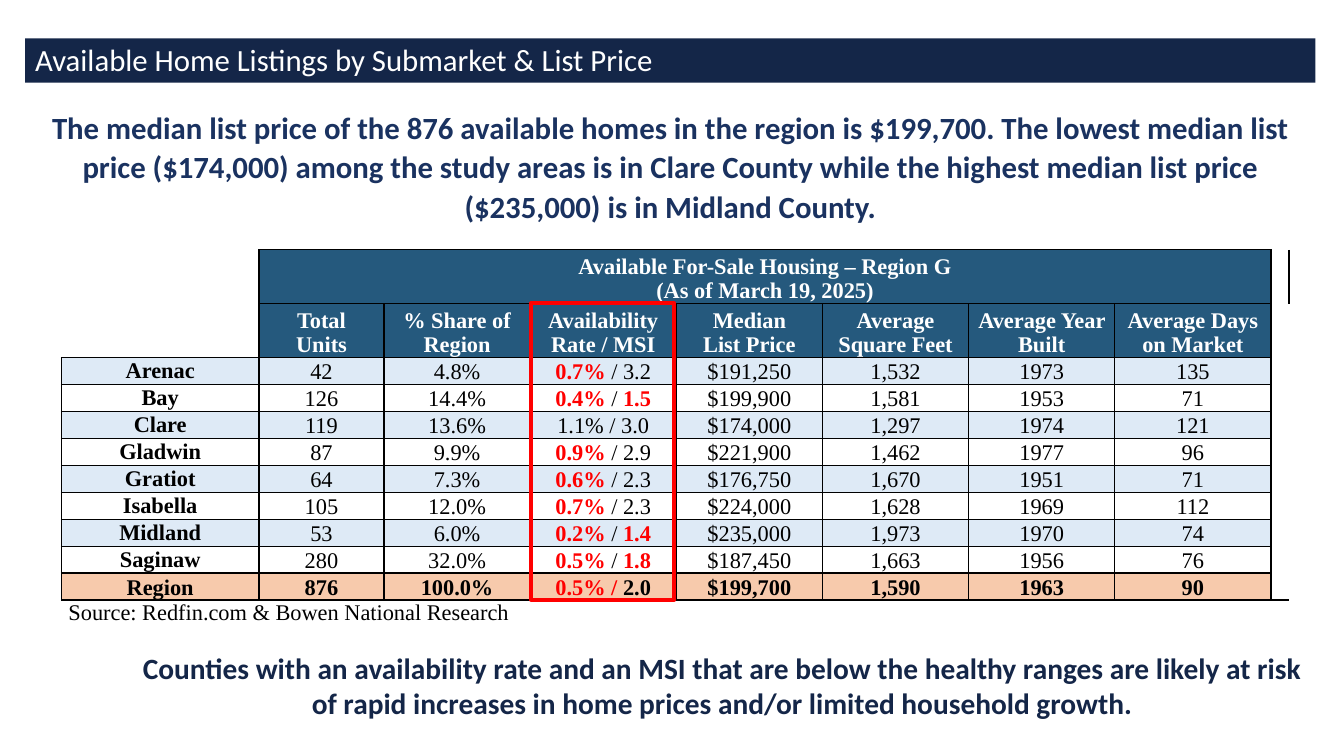
from dataclasses import dataclass

from lxml.etree import SubElement
from pptx import Presentation
from pptx.dml.color import RGBColor
from pptx.enum.shapes import MSO_SHAPE
from pptx.enum.text import MSO_ANCHOR, MSO_AUTO_SIZE, PP_ALIGN
from pptx.oxml.ns import qn
from pptx.util import Pt


@dataclass(frozen=True)
class Theme:
    heading_font: str = "Calibri"
    table_font: str = "Times New Roman"
    heading_size: float = 22
    closing_size: float = 21
    table_size: int = 16
    navy: str = "142648"
    blue: str = "1A3260"
    header: str = "25597D"
    band: str = "DEEAF6"
    total: str = "F7CAAC"
    alert: str = "FF0000"
    black: str = "000000"
    white: str = "FFFFFF"
    plain_table: str = "{2D5ABB26-0587-4C30-8999-92F81FD0307C}"


COLUMN_WIDTHS = [141.1, 89.3] + [104.4] * 5 + [111.6, 12.2]
ROW_HEIGHTS = [38.6] * 2 + [19.2] * 10
TABLE_TITLE = "Available For-Sale Housing – Region G\n(As of March 19, 2025)"
HEADERS = ["Total\nUnits", "% Share of Region", "Availability Rate / MSI", "Median\nList Price",
           "Average Square Feet", "Average Year Built", "Average Days\non Market"]
LISTINGS = [
    ["Arenac", "42", "4.8%", "0.7% / 3.2", "$191,250", "1,532", "1973", "135"],
    ["Bay", "126", "14.4%", "0.4% / 1.5", "$199,900", "1,581", "1953", "71"],
    ["Clare", "119", "13.6%", "1.1% / 3.0", "$174,000", "1,297", "1974", "121"],
    ["Gladwin", "87", "9.9%", "0.9% / 2.9", "$221,900", "1,462", "1977", "96"],
    ["Gratiot", "64", "7.3%", "0.6% / 2.3", "$176,750", "1,670", "1951", "71"],
    ["Isabella", "105", "12.0%", "0.7% / 2.3", "$224,000", "1,628", "1969", "112"],
    ["Midland", "53", "6.0%", "0.2% / 1.4", "$235,000", "1,973", "1970", "74"],
    ["Saginaw", "280", "32.0%", "0.5% / 1.8", "$187,450", "1,663", "1956", "76"],
    ["Region", "876", "100.0%", "0.5% / 2.0", "$199,700", "1,590", "1963", "90"],
]
AVAILABILITY_COLUMN = 3
HEALTHY_RATE = 1.0
HEALTHY_MSI = 2.0


class SlideBuilder:
    """Draws styled elements on the current slide."""

    def __init__(self, page, theme):
        self.page = page
        self.theme = theme

    def style(self, span, font, size, color, bold):
        span.font.name = font
        span.font.size = Pt(size)
        span.font.bold = bold
        span.font.color.rgb = RGBColor.from_string(color)

    def rectangle(self, left, top, width, height, fill=None, line=None):
        box = self.page.shapes.add_shape(MSO_SHAPE.RECTANGLE, Pt(left), Pt(top), Pt(width), Pt(height))
        box.shadow.inherit = False
        if fill:
            box.fill.solid()
            box.fill.fore_color.rgb = RGBColor.from_string(fill)
        else:
            box.fill.background()
        if line:
            box.line.color.rgb = RGBColor.from_string(line)
            box.line.width = Pt(3)
        else:
            box.line.fill.background()
        return box

    def box_text(self, box, text, size, color, bold, align, spacing):
        box.text_frame.word_wrap = True
        box.text_frame.text = text
        para = box.text_frame.paragraphs[0]
        para.alignment = align
        para.line_spacing = spacing
        self.style(para.runs[0], self.theme.heading_font, size, color, bold)

    def title_bar(self, left, top, width, height, text):
        bar = self.rectangle(left, top, width, height, fill=self.theme.navy)
        bar.text_frame.vertical_anchor = MSO_ANCHOR.BOTTOM
        self.box_text(bar, text, self.theme.heading_size, self.theme.white, False, PP_ALIGN.LEFT, 0.85)

    def statement(self, left, top, width, height, text, size, color, spacing):
        box = self.page.shapes.add_textbox(Pt(left), Pt(top), Pt(width), Pt(height))
        self.box_text(box, text, size, color, True, PP_ALIGN.CENTER, spacing)
        box.text_frame.auto_size = MSO_AUTO_SIZE.SHAPE_TO_FIT_TEXT

    def table(self, left, top, widths, heights):
        frame = self.page.shapes.add_table(len(heights), len(widths), Pt(left), Pt(top),
                                           Pt(sum(widths)), Pt(sum(heights)))
        table = frame.table
        table.first_row = table.horz_banding = False
        table._tbl.tblPr.find(qn("a:tableStyleId")).text = self.theme.plain_table
        for column, width in zip(table.columns, widths):
            column.width = Pt(width)
        for row, height in zip(table.rows, heights):
            row.height = Pt(height)
        for cell in table.iter_cells():
            cell.margin_left = cell.margin_right = Pt(5)
            cell.margin_top = cell.margin_bottom = 0
            ending = cell.text_frame.paragraphs[0]._p.get_or_add_endParaRPr()
            ending.set("sz", str(self.theme.table_size * 100))
        return table

    def cell_look(self, cell, fill=None, sides="LRTB"):
        properties = cell._tc.get_or_add_tcPr()
        for side in sides:
            line = SubElement(properties, qn(f"a:ln{side}"), w=str(Pt(1)))
            SubElement(SubElement(line, qn("a:solidFill")), qn("a:srgbClr"), val=self.theme.black)
        if fill:
            cell.fill.solid()
            cell.fill.fore_color.rgb = RGBColor.from_string(fill)
        else:
            cell.fill.background()

    def cell_text(self, cell, text, color, bold, align=PP_ALIGN.CENTER, anchor=MSO_ANCHOR.BOTTOM):
        cell.vertical_anchor = anchor
        cell.text_frame.text = text
        for para in cell.text_frame.paragraphs:
            para.alignment = align
            for span in para.runs:
                self.style(span, self.theme.table_font, self.theme.table_size, color, bold)

    def availability(self, cell, text, is_total):
        rate, msi = text.split(" / ")
        low_rate = float(rate.rstrip("%")) < HEALTHY_RATE
        low_msi = float(msi) < HEALTHY_MSI
        cell.vertical_anchor = MSO_ANCHOR.BOTTOM
        para = cell.text_frame.paragraphs[0]
        para.alignment = PP_ALIGN.CENTER
        for part, alert in ((rate, low_rate), (" / ", is_total), (msi, low_msi)):
            span = para.add_run()
            span.text = part
            color = self.theme.alert if alert else self.theme.black
            self.style(span, self.theme.table_font, self.theme.table_size, color, alert or is_total)

    def listings_table(self, left, top):
        theme = self.theme
        table = self.table(left, top, COLUMN_WIDTHS, ROW_HEIGHTS)
        last_column, last_row = len(COLUMN_WIDTHS) - 1, len(ROW_HEIGHTS) - 1
        table.cell(0, 1).merge(table.cell(0, last_column - 1))
        table.cell(last_row, 0).merge(table.cell(last_row, last_column))

        for column, header in enumerate(HEADERS, 1):
            self.cell_look(table.cell(0, column), theme.header)
            self.cell_look(table.cell(1, column), theme.header)
            self.cell_text(table.cell(1, column), header, theme.white, True)
        self.cell_text(table.cell(0, 1), TABLE_TITLE, theme.white, True)
        self.cell_look(table.cell(0, 0), sides="R")
        self.cell_look(table.cell(1, 0), sides="RB")

        for row, listing in enumerate(LISTINGS, 2):
            is_total = row == last_row - 1
            fill = theme.total if is_total else theme.band if row % 2 == 0 else None
            for column, value in enumerate(listing):
                cell = table.cell(row, column)
                self.cell_look(cell, fill)
                if column == AVAILABILITY_COLUMN:
                    self.availability(cell, value, is_total)
                else:
                    anchor = MSO_ANCHOR.MIDDLE if column == 0 and not is_total else MSO_ANCHOR.BOTTOM
                    self.cell_text(cell, value, theme.black, column == 0 or is_total, anchor=anchor)

        for row in range(last_row):
            self.cell_look(table.cell(row, last_column), sides="LB" if row == last_row - 1 else "L")
        for column in range(last_column + 1):
            self.cell_look(table.cell(last_row, column), theme.white, sides="T")
        self.cell_text(table.cell(last_row, 0), "Source: Redfin.com & Bowen National Research",
                       theme.black, False, PP_ALIGN.LEFT, MSO_ANCHOR.MIDDLE)


def main():
    theme = Theme()
    deck = Presentation()
    deck.slide_width, deck.slide_height = Pt(960), Pt(540)
    builder = SlideBuilder(deck.slides.add_slide(deck.slide_layouts[6]), theme)
    builder.title_bar(18, 27.4, 921.6, 31.7, "Available Home Listings by Submarket & List Price")
    builder.statement(
        18, 72, 921.6, 90.7,
        "The median list price of the 876 available homes in the region is $199,700. The lowest median "
        "list price ($174,000) among the study areas is in Clare County while the highest median list "
        "price ($235,000) is in Midland County.", theme.heading_size, theme.blue, 1.07)
    builder.listings_table(43.9, 178.4)
    builder.rectangle(379.4, 216.7, 102.2, 211.7, line=theme.alert)
    builder.statement(
        85.7, 460.8, 860.4, 58.3,
        "Counties with an availability rate and an MSI that are below the healthy ranges are likely at "
        "risk of rapid increases in home prices and/or limited household growth.",
        theme.closing_size, theme.navy, 1.0)
    deck.save("out.pptx")


if __name__ == "__main__":
    main()
